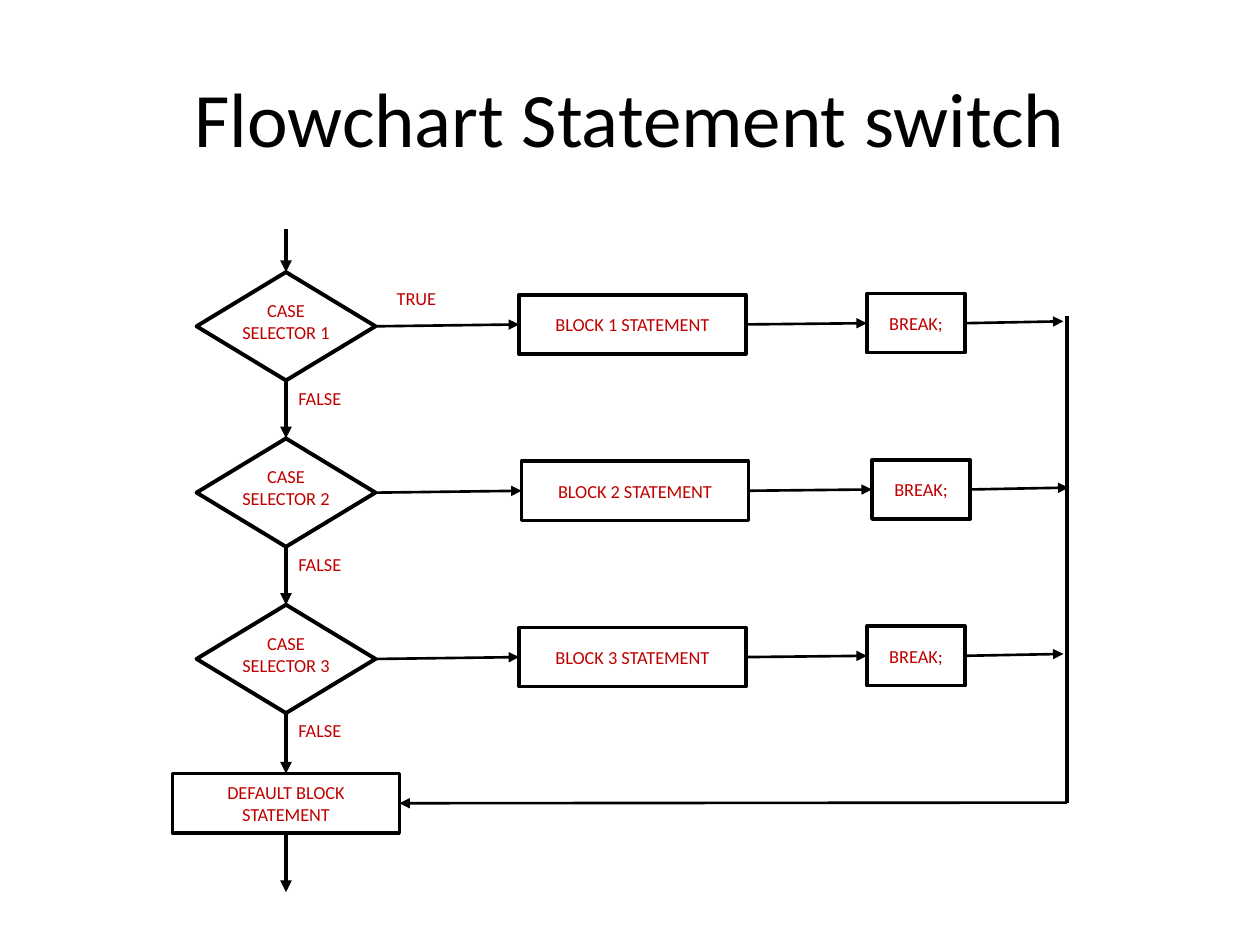
import pptx
import pptx.util
import pptx.dml.color
import pptx.enum.shapes
import pptx.enum.text
import pptx.oxml.ns
import lxml.etree

BLACK = pptx.dml.color.RGBColor(0x00, 0x00, 0x00)
WHITE = pptx.dml.color.RGBColor(0xFF, 0xFF, 0xFF)
RED = pptx.dml.color.RGBColor(0xC0, 0x00, 0x00)
SHAPES = pptx.enum.shapes.MSO_SHAPE
CENTER = pptx.enum.text.PP_ALIGN.CENTER
TOP = pptx.enum.text.MSO_ANCHOR.TOP
MIDDLE = pptx.enum.text.MSO_ANCHOR.MIDDLE
LABEL_FONT = {"name": "Calibri", "size": pptx.util.Pt(10.5)}
TITLE_FONT = {"name": "Calibri", "size": pptx.util.Pt(44)}
DIAMOND_FRAME = {"margin_left": 0, "margin_top": 0, "margin_right": 0,
                 "margin_bottom": 0, "vertical_anchor": TOP, "word_wrap": True}
BOX_FRAME = {"vertical_anchor": MIDDLE, "word_wrap": True}
LABEL_FRAME = {"word_wrap": False}

deck = pptx.Presentation()
deck.slide_width = pptx.util.Inches(10)
deck.slide_height = pptx.util.Inches(7.5)
column = deck.slide_width // 10
row = deck.slide_height / 7.5
slide = deck.slides.add_slide(deck.slide_layouts[5])

heading = slide.shapes.title
for name, value in {"left": 0.5 * column, "top": 0.3 * row,
                    "width": 9 * column, "height": 1.25 * row}.items():
    setattr(heading, name, int(value))
heading.text_frame.text = "Flowchart Statement switch"
heading.text_frame.vertical_anchor = MIDDLE
heading.text_frame.paragraphs[0].alignment = CENTER
heading_font = heading.text_frame.paragraphs[0].runs[0].font
heading_font.color.rgb = BLACK
for name, value in TITLE_FONT.items():
    setattr(heading_font, name, value)

flow = slide.shapes.add_group_shape().shapes


def add_step(kind, text, left, top, width, height, frame, weight=2):
    area = [int(left * column), int(top * row), int(width * column), int(height * row)]
    if kind is None:
        step = flow.add_textbox(*area)
    else:
        step = flow.add_shape(kind, *area)
        step.shadow.inherit = False
        step.line.color.rgb = BLACK
        step.line.width = pptx.util.Pt(weight)
        if kind == SHAPES.FLOWCHART_DECISION:
            step.fill.solid()
            step.fill.fore_color.rgb = WHITE
        else:
            step.fill.background()
    for name, value in frame.items():
        setattr(step.text_frame, name, value)
    step.text_frame.text = text
    paragraph = step.text_frame.paragraphs[0]
    if kind is not None:
        paragraph.alignment = CENTER
    font = paragraph.runs[0].font
    font.color.rgb = RED
    for name, value in LABEL_FONT.items():
        setattr(font, name, value)
    return step


def add_link(start, end, weight, tip="tailEnd", source=None, target=None):
    link = flow.add_connector(
        pptx.enum.shapes.MSO_CONNECTOR.STRAIGHT,
        int(start[0] * column), int(start[1] * row),
        int(end[0] * column), int(end[1] * row))
    if source:
        link.begin_connect(*source)
    if target:
        link.end_connect(*target)
    link.line.color.rgb = BLACK
    link.line.width = pptx.util.Pt(weight)
    if tip:
        lxml.etree.SubElement(link.line._get_or_add_ln(),
                              pptx.oxml.ns.qn("a:" + tip), type="triangle")
    lxml.etree.SubElement(link._element.spPr, pptx.oxml.ns.qn("a:effectLst"))


axis, spine, pitch = 2.27, 8.47, 1.32
selectors = []
for index, nudge in enumerate((0, 0.02, 0)):
    top = 2.16 + index * pitch
    middle = top + 0.42
    selector = add_step(SHAPES.FLOWCHART_DECISION, f"CASE SELECTOR {index + 1}",
                        axis - 0.71, top, 1.42, 0.86, DIAMOND_FRAME, 2.25)
    block = add_step(SHAPES.RECTANGLE, f"BLOCK {index + 1} STATEMENT",
                     4.12 + nudge, top + 0.18, 1.8, 0.47, BOX_FRAME)
    leave = add_step(SHAPES.RECTANGLE, "BREAK;",
                     6.88 + 2 * nudge, top + 0.17, 0.78, 0.47, BOX_FRAME)
    add_step(None, "FALSE", axis, top + 0.86, 0.63, 0.31, LABEL_FRAME)
    add_link((2.98, middle), (4.12, middle), 1.5, source=(selector, 3), target=(block, 1))
    add_link((5.92, middle), (6.88, middle), 1.5, source=(block, 3), target=(leave, 1))
    add_link((7.66, middle), (8.44 + 2 * nudge, top + 0.39), 1.5, source=(leave, 3))
    selectors.append(selector)

add_step(None, "TRUE", 3.05, 2.23, 0.52, 0.31, LABEL_FRAME)
default = add_step(SHAPES.RECTANGLE, "DEFAULT BLOCK STATEMENT",
                   axis - 0.9, 6.14, 1.8, 0.47, BOX_FRAME)

add_link((axis, 1.82), (axis, 2.16), 2.25, target=(selectors[0], 0))
for upper, lower in zip(selectors, selectors[1:] + [default]):
    add_link((axis, 3), (axis, 4), 2.25, source=(upper, 2), target=(lower, 0))
add_link((axis, 6.61), (axis, 7.08), 2.25, source=(default, 2))
add_link((spine, 2.51), (spine, 6.37), 2.25, tip=None)
add_link((3.17, 6.37), (spine, 6.37), 1.5, tip="headEnd", source=(default, 3))

deck.save("out.pptx")
